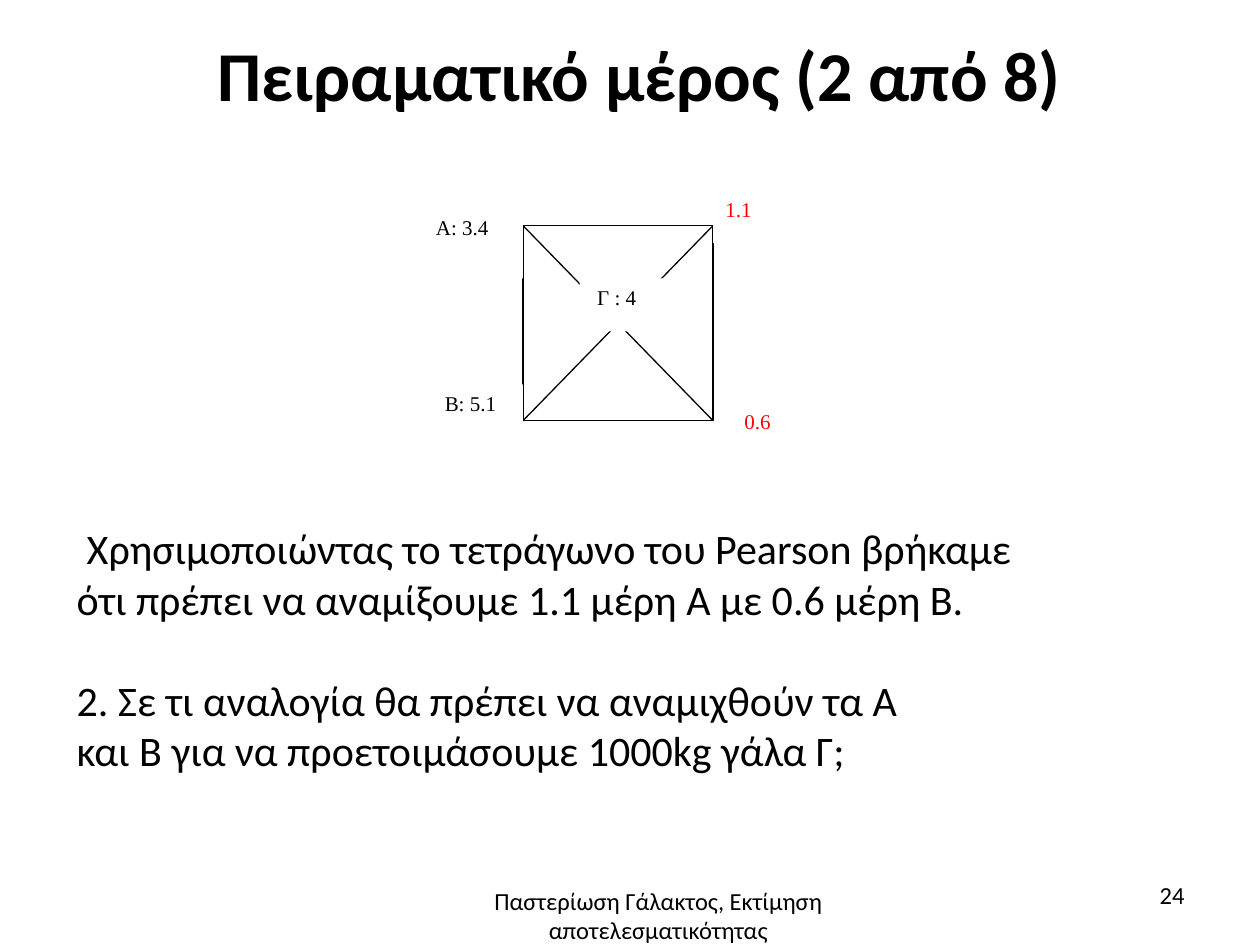
from lxml import etree
from pptx import Presentation
from pptx import util as u
from pptx.dml.color import RGBColor
from pptx.enum import shapes, text
from pptx.oxml import ns

BLACK = RGBColor(0, 0, 0)
WHITE = RGBColor(255, 255, 255)
RED = RGBColor(255, 0, 0)
LEFT, MID, RIGHT = text.PP_ALIGN.LEFT, text.PP_ALIGN.CENTER, text.PP_ALIGN.RIGHT
TOP, HALF = text.MSO_ANCHOR.TOP, text.MSO_ANCHOR.MIDDLE


class Page:
    """Holds the slide, its group of drawn parts and the text style."""

    sans, serif = "Calibri", "Times New Roman"

    def __init__(self, slide):
        self.slide = slide
        self.group = slide.shapes.add_group_shape()

    def style(self, para, size, face, color=BLACK, align=LEFT, bold=False):
        para.alignment = align
        font = para.font
        font.size, font.name, font.bold = u.Pt(size), face, bold
        font.color.rgb = color

    def title(self, words, x, y, w, h):
        box = self.slide.shapes.title
        box.left, box.top, box.width, box.height = map(u.Inches, (x, y, w, h))
        frame = box.text_frame
        frame.text = words
        frame.vertical_anchor = HALF
        frame.margin_left = frame.margin_right = frame.margin_bottom = 0
        frame.margin_top = u.Inches(0.02)
        para = frame.paragraphs[0]
        self.style(para, 40, self.sans, align=MID, bold=True)
        para.line_spacing = 0.98

    def rect(self, x, y, w, h, edge=False):
        box = self.group.shapes.add_shape(
            shapes.MSO_SHAPE.RECTANGLE, *map(u.Inches, (x, y, w, h)))
        box.shadow.inherit = False
        box.fill.solid()
        box.fill.fore_color.rgb = WHITE
        if edge:
            box.line.color.rgb = BLACK
            box.line.width = u.Pt(0.75)
        else:
            box.line.fill.background()
        return box

    def line(self, *ends):
        link = self.group.shapes.add_connector(
            shapes.MSO_CONNECTOR.STRAIGHT, *map(u.Inches, ends))
        link.line.color.rgb = BLACK
        link.line.width = u.Pt(0.75)
        etree.SubElement(link._element.spPr, ns.qn("a:effectLst"))

    def label(self, words, x, y, w, h, inset=0.1, color=BLACK):
        frame = self.rect(x, y, w, h).text_frame
        frame.text = words
        frame.vertical_anchor = TOP
        frame.margin_left = u.Inches(inset)
        self.style(frame.paragraphs[0], 12, self.serif, color)

    def note(self, rows, x, y, w, h, size, align=LEFT, anchor=TOP):
        box = self.slide.shapes.add_textbox(*map(u.Inches, (x, y, w, h)))
        frame = box.text_frame
        frame.word_wrap = True
        frame.vertical_anchor = anchor
        frame.text = "\n".join(rows)
        for para in frame.paragraphs:
            self.style(para, size, self.sans, align=align)
        return frame.paragraphs


def main():
    deck = Presentation()
    deck.slide_width, deck.slide_height = u.Inches(10), u.Inches(7.5)
    page = Page(deck.slides.add_slide(deck.slide_layouts[5]))

    page.title("Πειραματικό μέρος (2 από 8)", 0.51, 0.05, 9.13, 1.1)

    # Mixing square with its diagonals
    x, y, w, h = 4.15, 1.79, 1.51, 1.55
    page.rect(x, y, w, h, edge=True)
    page.line(x, y + h, x + w, y)
    page.line(x, y, x + w, y + h)

    # Values at the corners and in the centre
    page.label("A: 3.4", 3.24, 1.65, 0.91, 0.56, inset=0.22)
    page.label("B: 5.1", 3.39, 3.05, 0.76, 0.56, inset=0.14)
    page.label("Γ : 4", 4.6, 2.21, 0.76, 0.42, inset=0.14)
    page.label("1.1", 5.66, 1.51, 1.17, 0.42, color=RED)
    page.label("0.6", 5.81, 3.19, 1.17, 0.42, color=RED)

    # Result and next question
    rows = page.note([
        "Χρησιμοποιώντας το τετράγωνο του Pearson βρήκαμε",
        "ότι πρέπει να αναμίξουμε 1.1 μέρη Α με 0.6 μέρη Β.",
        "2. Σε τι αναλογία θα πρέπει να αναμιχθούν τα Α",
        "και Β για να προετοιμάσουμε 1000kg γάλα Γ;",
    ], 0.51, 4.1, 8.98, 2.12, 24)
    rows[0]._p.get_or_add_pPr().set("indent", str(u.Inches(0.08)))
    rows[2].space_before = u.Pt(29)

    # Footer and page number
    page.note(["Παστερίωση Γάλακτος, Εκτίμηση αποτελεσματικότητας"],
              3.48, 6.98, 3.49, 0.55, 14, MID)
    page.note(["24"], 7.17, 6.9, 2.33, 0.4, 14, RIGHT, HALF)

    deck.save("out.pptx")


if __name__ == "__main__":
    main()
